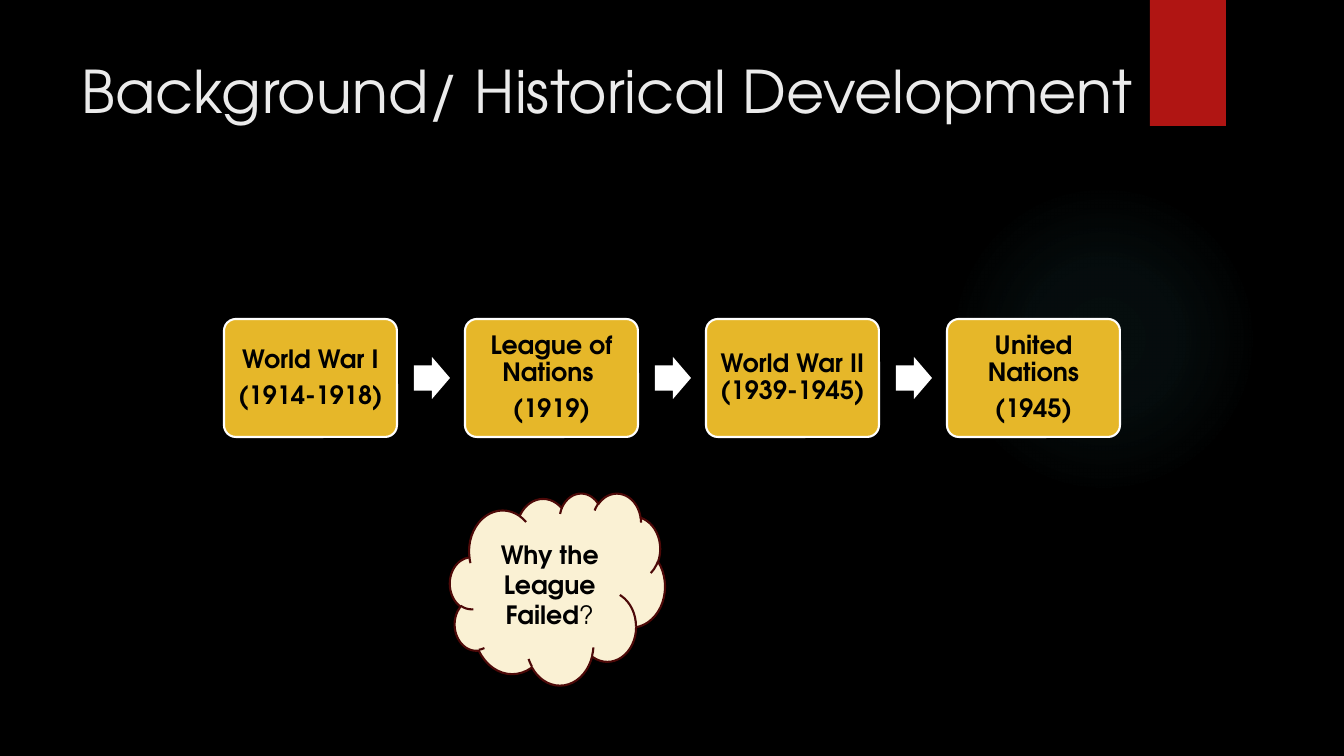
from pptx import Presentation
from pptx.dml.color import RGBColor
from pptx.enum.shapes import MSO_SHAPE
from pptx.enum.text import MSO_ANCHOR, PP_ALIGN
from pptx.oxml import parse_xml
from pptx.oxml.ns import nsdecls
from pptx.util import Pt

SCALE = 12192000 / 1344  # EMU per px
FONT = "TeX Gyre Adventor"
COLORS = {
    "black": "000000", "white": "FFFFFF", "title": "EBEBEB", "red": "B01513",
    "gold": "E6B729", "cream": "FAF1D4", "maroon": "4D0908", "glow": "50B9C1",
}


def add_shape(kind, left, top, width, height, fill, line=None):
    box = [round(value * SCALE) for value in (left, top, width, height)]
    shape = slide.shapes.add_shape(kind, *box)
    shape.shadow.inherit = False
    shape.fill.solid()
    shape.fill.fore_color.rgb = RGBColor.from_string(COLORS[fill])
    if line:
        shape.line.color.rgb = RGBColor.from_string(COLORS[line])
        shape.line.width = Pt(1.5)
    else:
        shape.line.fill.background()
    return shape


def add_run(paragraph, text, size, color, bold):
    run = paragraph.add_run()
    run.text = text
    run.font.name = FONT
    run.font.size = Pt(size)
    run.font.bold = bold
    run.font.color.rgb = RGBColor.from_string(COLORS[color])


presentation = Presentation()
presentation.slide_width = round(1344 * SCALE)
presentation.slide_height = round(756 * SCALE)
slide = presentation.slides.add_slide(presentation.slide_layouts[6])
slide.background.fill.solid()
slide.background.fill.fore_color.rgb = RGBColor.from_string(COLORS["black"])

# Soft glow, fading from its centre
glow = add_shape(MSO_SHAPE.OVAL, 949, 184, 310, 310, "glow")
stops = "".join(
    f'<a:gs pos="{position}000"><a:srgbClr val="{COLORS["glow"]}">'
    f'<a:alpha val="{alpha}000"/></a:srgbClr></a:gs>'
    for position, alpha in [(0, 7), (36, 6), (69, 0), (100, 0)]
)
gradient = parse_xml(
    f'<a:gradFill {nsdecls("a")}><a:gsLst>{stops}</a:gsLst><a:path path="circle">'
    '<a:fillToRect l="50000" t="50000" r="50000" b="50000"/></a:path></a:gradFill>'
)
solid = glow.fill._xPr.solidFill if hasattr(glow.fill._xPr, "solidFill") else glow.fill._xPr.find(
    "{http://schemas.openxmlformats.org/drawingml/2006/main}solidFill")
solid.getparent().replace(solid, gradient)

# Red tab
add_shape(MSO_SHAPE.RECTANGLE, 1150, 0, 76, 126, "red")

# Title
title = slide.shapes.add_textbox(*[round(value * SCALE) for value in (72, 50, 1166, 154)])
title.text_frame.word_wrap = True
add_run(title.text_frame.paragraphs[0], "Background/ Historical Development", 42, "title", False)

# Timeline: boxes joined by arrows
events = [
    ["World War I", "(1914-1918)"],
    ["League of Nations ", "(1919)"],
    ["World War II (1939-1945)"],
    ["United Nations", "(1945)"],
]
for index, lines in enumerate(events):
    left = 224 + 241 * index
    event = add_shape(MSO_SHAPE.ROUNDED_RECTANGLE, left, 319, 173, 118, "gold", "white")
    event.adjustments[0] = 0.1
    frame = event.text_frame
    frame.word_wrap = True
    frame.vertical_anchor = MSO_ANCHOR.MIDDLE
    frame.margin_left = frame.margin_right = round(7 * SCALE)
    frame.margin_top = frame.margin_bottom = round(7 * SCALE)
    for number, text in enumerate(lines):
        paragraph = frame.add_paragraph() if number else frame.paragraphs[0]
        paragraph.alignment = PP_ALIGN.CENTER
        paragraph.line_spacing = 0.9
        paragraph.space_after = Pt(6.3)
        add_run(paragraph, text, 18, "black", True)
    if index < len(events) - 1:
        arrow = add_shape(MSO_SHAPE.RIGHT_ARROW, left + 190, 357, 36, 42, "white")
        arrow.adjustments[0] = 0.6
        arrow.adjustments[1] = 0.5

# Question cloud
cloud = add_shape(MSO_SHAPE.CLOUD, 450, 493, 215, 192, "cream", "maroon")
cloud.text_frame.word_wrap = True
cloud.text_frame.vertical_anchor = MSO_ANCHOR.MIDDLE
question = cloud.text_frame.paragraphs[0]
question.alignment = PP_ALIGN.CENTER
add_run(question, "Why the League Failed", 18, "black", True)
add_run(question, "?", 18, "black", False)

presentation.save("out.pptx")
